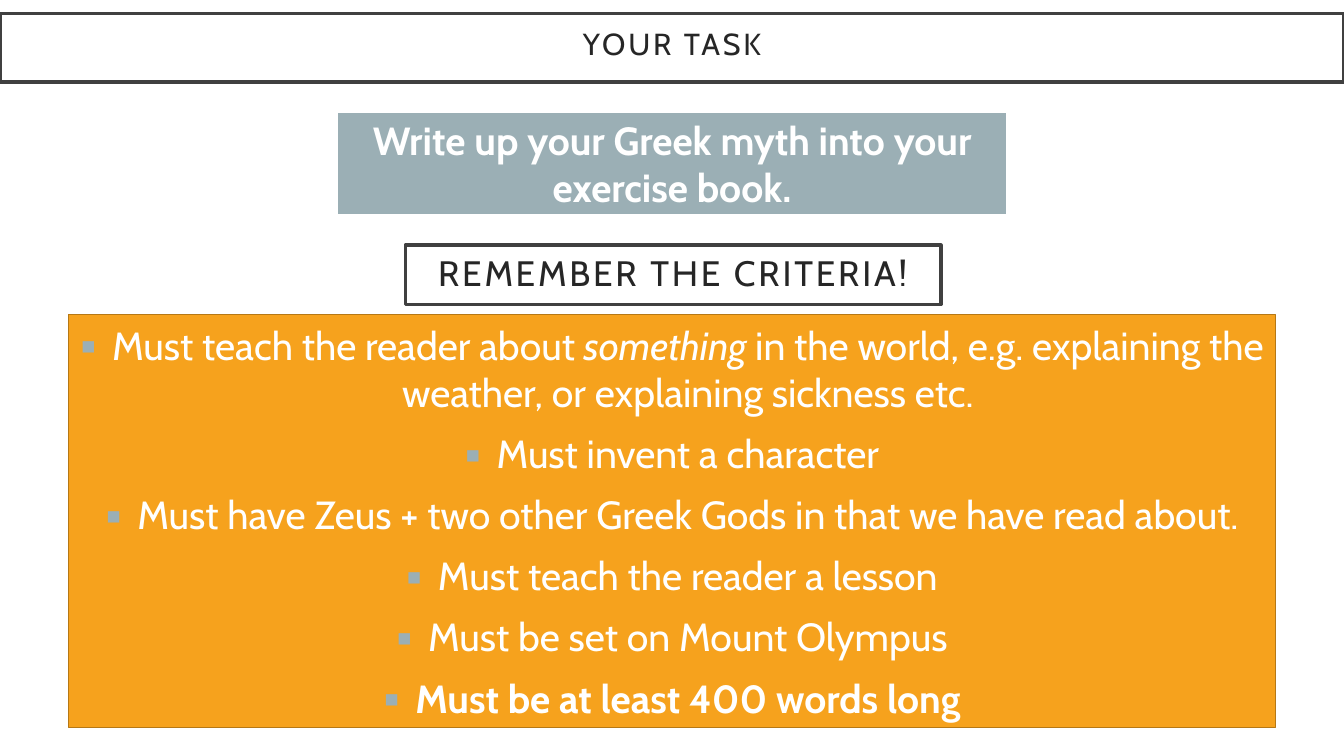
from dataclasses import dataclass

from lxml import etree
from pptx import Presentation
from pptx import util as u
from pptx.dml import color
from pptx.enum import shapes, text
from pptx.oxml import ns

FONT = "Cabin"
WHITE, DARK, BORDER = "FFFFFF", "262626", "404040"
ORANGE, BROWN, SAGE = "F6A21D", "B67815", "9BAFB5"


@dataclass
class Panel:
    left: float
    top: float
    width: float
    height: float
    fill: str
    line: str
    line_width: float = 2.5
    inset_x: float = 7.2
    inset_y: float = 3.6
    anchor: text.MSO_ANCHOR = text.MSO_ANCHOR.MIDDLE


@dataclass
class Style:
    size: float
    color: str
    bold: bool = False
    tracking: float = 0
    line_spacing: float = 1.0


@dataclass
class Criterion:
    phrases: list[str]
    bold: bool = False
    italic_index: int = -1


TITLE = Panel(289.5, 175, 382.5, 42.5, WHITE, BORDER, inset_x=14.4, inset_y=14.4)
CRITERIA_BOX = Panel(49, 224.75, 862, 295, ORANGE, BROWN, line_width=1)
BANNER = Panel(0, 9.5, 960, 49, WHITE, BORDER, inset_x=14.4, inset_y=14.4)
TASK = Panel(240, 79.5, 480, 75, SAGE, WHITE, anchor=text.MSO_ANCHOR.TOP)

CRITERIA = [
    Criterion(
        [
            "Must teach the reader about ",
            "something",
            " in the world, e.g. explaining the weather, or explaining sickness etc.",
        ],
        italic_index=1,
    ),
    Criterion(["Must invent a character"]),
    Criterion(["Must have Zeus + two other Greek Gods in that we have read about."]),
    Criterion(["Must teach the reader a lesson"]),
    Criterion(["Must be set on Mount Olympus"]),
    Criterion(["Must be at least 400 words long"], bold=True),
]


def rgb(value: str) -> color.RGBColor:
    return color.RGBColor.from_string(value)


def format_panel(sp, panel: Panel) -> None:
    sp.left, sp.top = u.Pt(panel.left), u.Pt(panel.top)
    sp.width, sp.height = u.Pt(panel.width), u.Pt(panel.height)
    sp.shadow.inherit = False
    sp.fill.solid()
    sp.fill.fore_color.rgb = rgb(panel.fill)
    sp.line.color.rgb = rgb(panel.line)
    sp.line.width = u.Pt(panel.line_width)
    tf = sp.text_frame
    tf.word_wrap = True
    tf.auto_size = text.MSO_AUTO_SIZE.NONE
    tf.vertical_anchor = panel.anchor
    tf.margin_left = tf.margin_right = u.Pt(panel.inset_x)
    tf.margin_top = tf.margin_bottom = u.Pt(panel.inset_y)


def format_paragraph(p, style: Style) -> None:
    p.alignment = text.PP_ALIGN.CENTER
    p.line_spacing = style.line_spacing
    p.space_before = u.Pt(0)
    for r in p.runs:
        r.font.name = FONT
        r.font.size = u.Pt(style.size)
        r.font.bold = style.bold
        r.font.color.rgb = rgb(style.color)
        if style.tracking:
            r._r.get_or_add_rPr().set("spc", str(int(style.tracking * 100)))


def add_bullet(p, indent: float) -> None:
    pPr = p._p.get_or_add_pPr()
    pPr.set("marL", str(u.Pt(indent)))
    pPr.set("indent", str(-u.Pt(indent)))
    clr = etree.SubElement(pPr, ns.qn("a:buClr"))
    etree.SubElement(clr, ns.qn("a:srgbClr"), val=SAGE)
    etree.SubElement(pPr, ns.qn("a:buFont"), typeface=FONT)
    etree.SubElement(pPr, ns.qn("a:buChar"), char="▪")


def fill_label(sp, panel: Panel, label: str, style: Style) -> None:
    format_panel(sp, panel)
    sp.text_frame.text = label
    format_paragraph(sp.text_frame.paragraphs[0], style)


def fill_criteria(sp, criteria: list[Criterion]) -> None:
    format_panel(sp, CRITERIA_BOX)
    tf = sp.text_frame
    for i, criterion in enumerate(criteria):
        p = tf.add_paragraph() if i else tf.paragraphs[0]
        add_bullet(p, 22.5)
        for j, phrase in enumerate(criterion.phrases):
            r = p.add_run()
            r.text = phrase
            r.font.italic = j == criterion.italic_index
        format_paragraph(p, Style(28, WHITE, criterion.bold))
        if i:
            p.space_before = u.Pt(10)


def main() -> None:
    prs = Presentation()
    prs.slide_width, prs.slide_height = u.Pt(960), u.Pt(540)
    s = prs.slides.add_slide(prs.slide_layouts[1])
    fill_label(s.shapes.title, TITLE, "REMEMBER THE CRITERIA!",
               Style(25.2, DARK, tracking=2, line_spacing=0.9))
    fill_criteria(s.placeholders[1], CRITERIA)
    labels = [
        (BANNER, "YOUR TASK", Style(21.7, DARK, tracking=2, line_spacing=0.7)),
        (TASK, "Write up your Greek myth into your exercise book.",
         Style(28, WHITE, bold=True)),
    ]
    for panel, label, style in labels:
        sp = s.shapes.add_shape(shapes.MSO_SHAPE.RECTANGLE, 0, 0, 0, 0)
        fill_label(sp, panel, label, style)
    prs.save("out.pptx")


if __name__ == "__main__":
    main()
